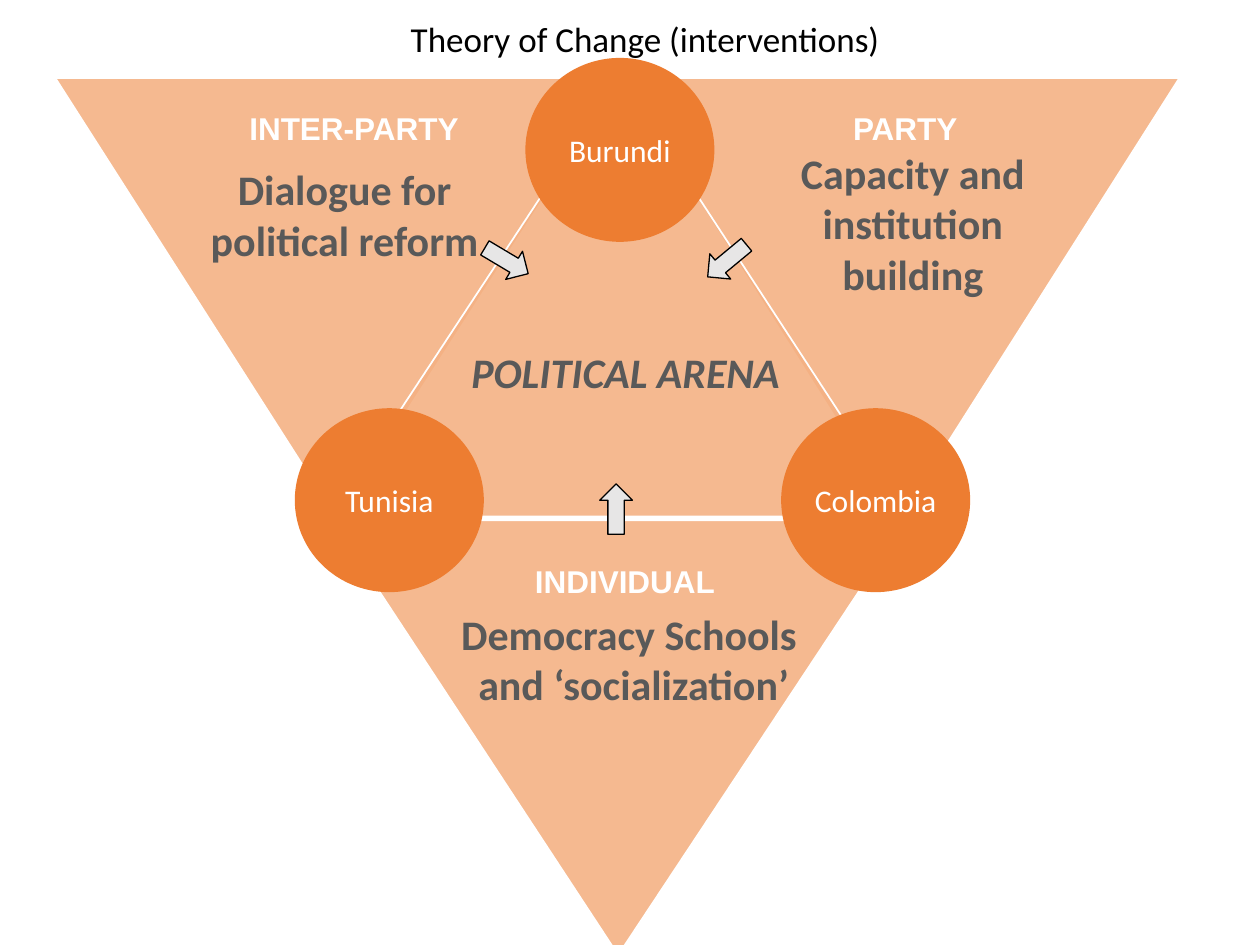
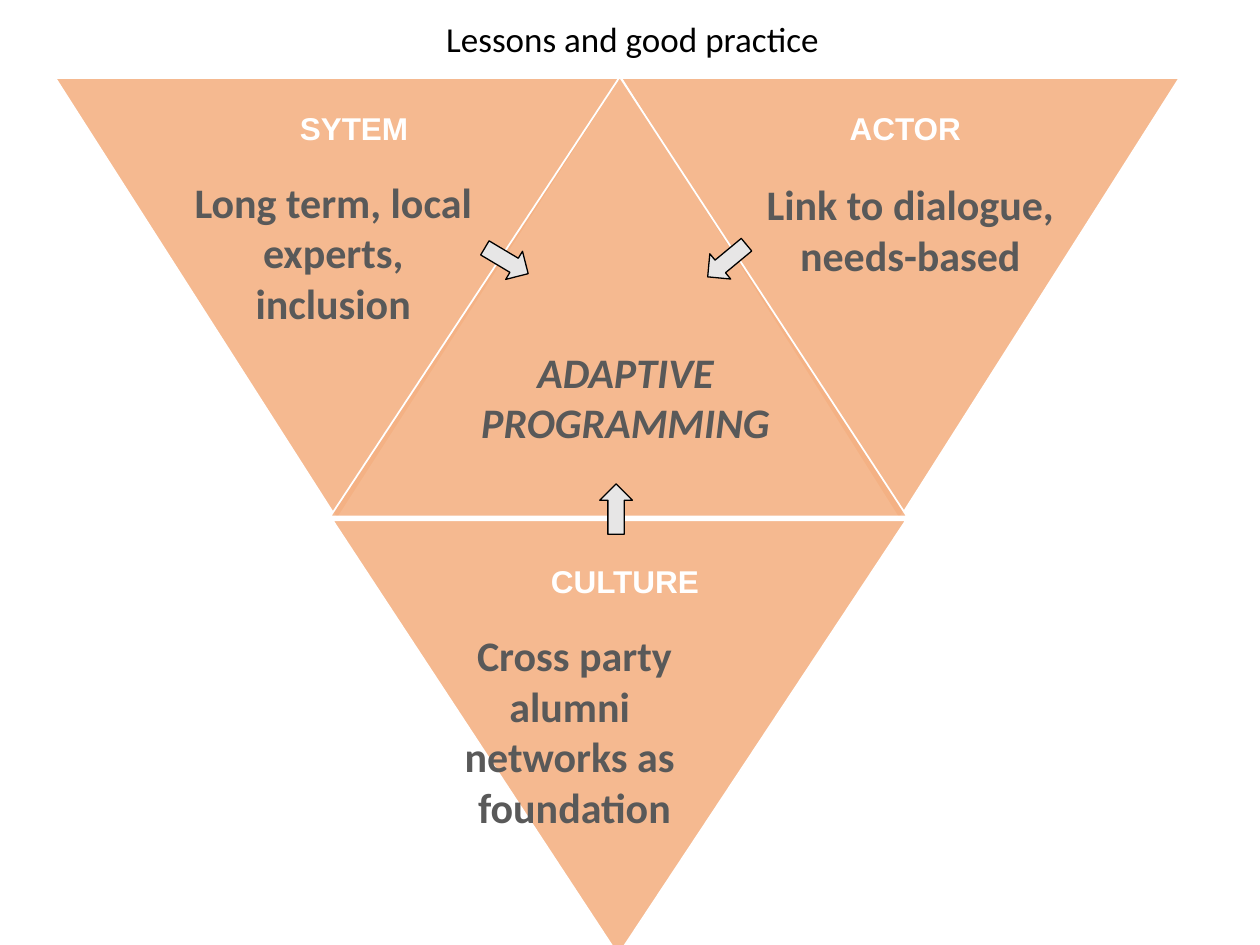
import pptx
import pptx.dml.color
import pptx.enum.shapes
import pptx.enum.text
import pptx.oxml.ns
import pptx.util
from lxml import etree

Inches = pptx.util.Inches
SHAPES = pptx.enum.shapes.MSO_SHAPE
ANCHOR = pptx.enum.text.MSO_ANCHOR
FIT = pptx.enum.text.MSO_AUTO_SIZE

COLOURS = {"panel": "F4B183", "country": "ED7D31", "arrow": "E7E6E6",
           "white": "FFFFFF", "grey": "595959", "black": "000000"}
TEXT_STYLES = {
    "title": ({"name": "Calibri", "size": pptx.util.Pt(20), "bold": False}, "black"),
    "heading": ({"name": "Arial", "size": pptx.util.Pt(18), "bold": True}, "white"),
    "message": ({"name": "Calibri", "size": pptx.util.Pt(24), "bold": True}, "grey"),
    "centre": ({"name": "Calibri", "size": pptx.util.Pt(24), "bold": True, "italic": True}, "grey"),
    "country": ({"name": "Calibri", "size": pptx.util.Pt(18)}, "white"),
}

OUTER_TRIANGLES = [(2.64, 4.13, 4.55, 3.45), (4.93, 0.62, 4.43, 3.5), (0.44, 0.62, 4.49, 3.5)]
INNER_TRIANGLE = (2.62, 0.61, 4.58, 3.49)
HEADING_BOXES = [(1.73, 0.82, 2.16, 0.4), (6.55, 0.82, 1.27, 0.4), (4.1, 4.41, 1.72, 0.4)]
ARROWS = [(3.82, 1.94, 30.8), (4.69, 3.91, 270), (5.57, 1.94, 140.4)]


def colour(hex_string):
    return pptx.dml.color.RGBColor.from_string(hex_string)


def apply(target, values):
    for name, value in values.items():
        setattr(target, name, value)


class TriangleDeck:
    def __init__(self):
        self.presentation = pptx.Presentation()
        apply(self.presentation, {"slide_width": Inches(10), "slide_height": Inches(7.5)})
        self.slide = None

    def fill_frame(self, frame, lines, style, spacing=None, **frame_format):
        apply(frame, {"word_wrap": True, **frame_format})
        font_format, font_colour = TEXT_STYLES[style]
        frame.text = "\n".join(lines)
        for paragraph in frame.paragraphs:
            paragraph.alignment = pptx.enum.text.PP_ALIGN.CENTER
            if spacing:
                paragraph.line_spacing = spacing
            for run in paragraph.runs:
                apply(run.font, font_format)
                run.font.color.rgb = colour(COLOURS[font_colour])

    def start(self, title, left):
        self.slide = self.presentation.slides.add_slide(self.presentation.slide_layouts[5])
        heading = self.slide.shapes.title
        apply(heading, {"left": Inches(left), "top": Inches(-0.16),
                        "width": Inches(9.16), "height": Inches(0.97)})
        self.fill_frame(heading.text_frame, [title], "title", spacing=0.9,
                        vertical_anchor=ANCHOR.MIDDLE, auto_size=FIT.NONE)

    def shape(self, preset, box, fill, line=None, weight=1, rotation=0):
        item = self.slide.shapes.add_shape(preset, *map(Inches, box))
        item.shadow.inherit = False
        item.rotation = rotation
        item.fill.solid()
        item.fill.fore_color.rgb = colour(COLOURS[fill])
        if line:
            item.line.color.rgb = colour(COLOURS[line])
            item.line.width = pptx.util.Pt(weight)
        else:
            item.line.fill.background()
        return item

    def triangle(self, box, rotation=0):
        panel = self.shape(SHAPES.ISOSCELES_TRIANGLE, box, "panel", "white", rotation=rotation)
        panel.adjustments[0] = 0.502
        qn = pptx.oxml.ns.qn
        tint = panel.element.spPr.find(qn("a:solidFill")).find(qn("a:srgbClr"))
        etree.SubElement(tint, qn("a:alpha"), val="89000")

    def arrow(self, left, top, rotation):
        self.shape(SHAPES.RIGHT_ARROW, (left, top, 0.4, 0.26), "arrow", "black", 0.75, rotation)

    def text(self, box, lines, style, **frame_format):
        label = self.slide.shapes.add_textbox(*map(Inches, box))
        self.fill_frame(label.text_frame, lines, style,
                        auto_size=FIT.SHAPE_TO_FIT_TEXT, **frame_format)

    def country(self, name, left, top, **margins):
        circle = self.shape(SHAPES.OVAL, (left, top, 1.5, 1.46), "country")
        self.fill_frame(circle.text_frame, [name], "country",
                        vertical_anchor=ANCHOR.MIDDLE, **margins)

    def diagram(self, title, title_left, headings, centre, centre_height, messages):
        self.start(title, title_left)
        for box in OUTER_TRIANGLES:
            self.triangle(box, 180)
        for box, heading in zip(HEADING_BOXES, headings):
            self.text(box, [heading], "heading")
        self.triangle(INNER_TRIANGLE)
        self.text((3.55, 2.7, 2.83, centre_height), [centre], "centre")
        for box, lines, frame_format in messages:
            self.text(box, lines, "message", **frame_format)
        for placement in ARROWS:
            self.arrow(*placement)


def main():
    deck = TriangleDeck()
    deck.diagram(
        "Theory of Change (interventions)", 0.54,
        ["INTER-PARTY", "PARTY", "INDIVIDUAL"], "POLITICAL ARENA", 0.5,
        [((1.51, 1.25, 2.45, 0.91), ["Dialogue for political reform"], {}),
         ((5.86, 1.12, 2.77, 0.91), ["Capacity and institution building"], {}),
         ((3.55, 4.78, 2.96, 0.91), ["Democracy Schools ", "and ‘socialization’"],
          {"word_wrap": False})])
    deck.country("Tunisia", 2.34, 3.24)
    deck.country("Burundi", 4.17, 0.46)
    deck.country("Colombia", 6.2, 3.24, margin_left=0, margin_right=0,
                 margin_top=Inches(0.04), margin_bottom=Inches(0.05))
    deck.diagram(
        "Lessons and good practice", 0.44,
        ["SYTEM", "ACTOR", "CULTURE"], "ADAPTIVE PROGRAMMING", 0.91,
        [((1.42, 1.35, 2.45, 1.31), ["Long term, local experts, inclusion"], {}),
         ((5.84, 1.37, 2.77, 0.91), ["Link to dialogue, needs-based"], {}),
         ((3.59, 4.95, 2.74, 1.31), ["Cross party alumni ", "networks as ", "foundation"],
          {"margin_right": Inches(0.9)})])
    deck.presentation.save("out.pptx")


if __name__ == "__main__":
    main()
